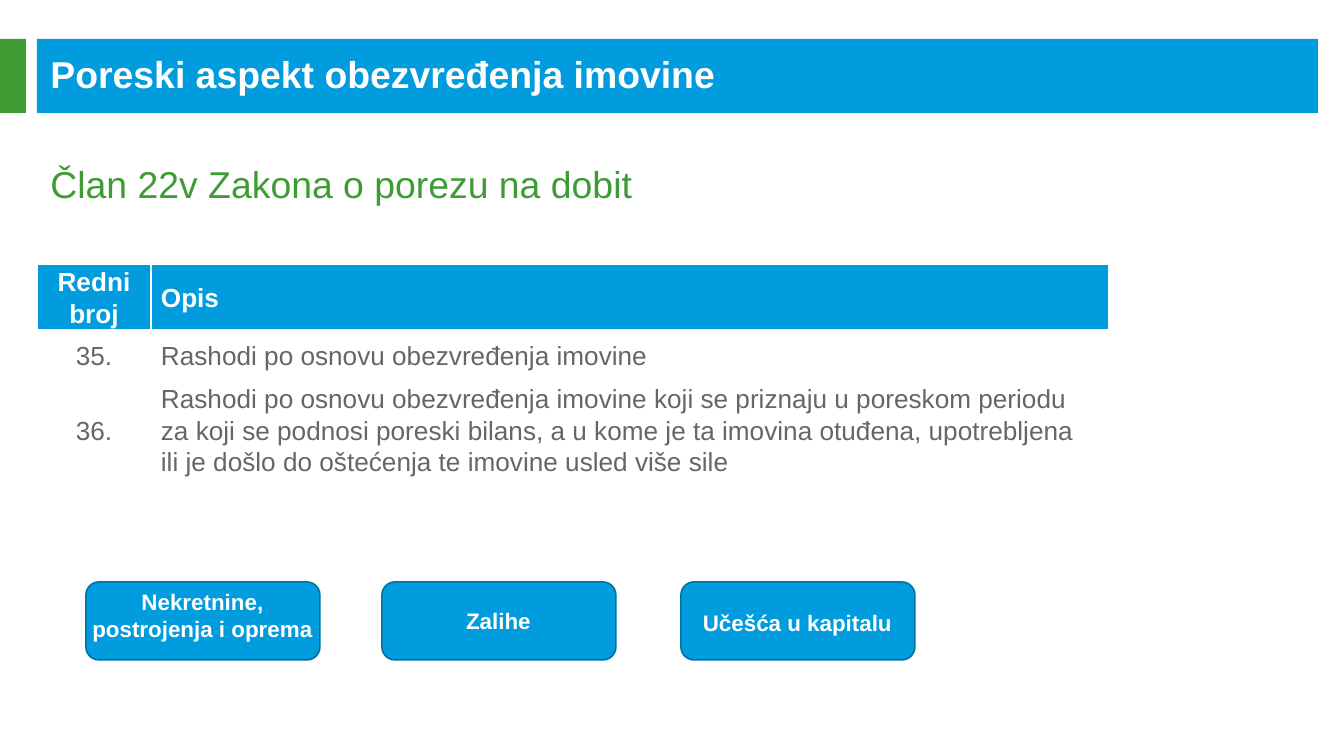
from pptx import Presentation
from pptx.dml.color import RGBColor
from pptx.enum.shapes import MSO_SHAPE as Shape
from pptx.enum.text import MSO_ANCHOR as Anchor, PP_ALIGN as Align
from pptx.oxml.ns import qn
from pptx.util import Pt
from lxml.etree import SubElement

SCALE = 914400 / 134.4
COLORS = {"blue": "009CDE", "green": "3F9C35", "outline": "0073A4",
          "gray": "63666A", "white": "FFFFFF"}
ROWS = [
    ("Redni broj", "Opis"),
    ("35.", "Rashodi po osnovu obezvređenja imovine"),
    ("36.", "Rashodi po osnovu obezvređenja imovine koji se priznaju u poreskom "
            "periodu za koji se podnosi poreski bilans, a u kome je ta imovina "
            "otuđena, upotrebljena ili je došlo do oštećenja te imovine usled "
            "više sile"),
]
COL_WIDTHS = (114, 958)
ROW_HEIGHTS = (66, 48, 102)
# Asset label, box left, label top, label height
ASSETS = [
    ("Nekretnine, postrojenja i oprema", 86, 582, 67),
    ("Zalihe", 382, 601, 40),
    ("Učešća u kapitalu", 681, 603, 40),
]


def px(n):
    return round(n * SCALE)


def box(*lengths):
    return [px(n) for n in lengths]


def color(name):
    return RGBColor.from_string(COLORS[name])


def write(tf, text, size=14, ink="white", bold=False, align=Align.LEFT,
          anchor=Anchor.TOP, spacing=None):
    tf.word_wrap = True
    tf.vertical_anchor = anchor
    p = tf.paragraphs[0]
    p.alignment = align
    p.space_before = Pt(0)
    if spacing:
        p.line_spacing = spacing
    r = p.add_run()
    r.text = text
    r.font.name = "Arial"
    r.font.size = Pt(size)
    r.font.bold = bold
    r.font.color.rgb = color(ink)
    return p


def add_block(slide, kind, area, fill, line=None):
    sp = slide.shapes.add_shape(kind, *box(*area))
    sp.shadow.inherit = False
    sp.fill.solid()
    sp.fill.fore_color.rgb = color(fill)
    if line:
        sp.line.color.rgb = color(line)
        sp.line.width = Pt(0.85)
    else:
        sp.line.fill.background()


def fill_placeholder(slide, ph, area, text, **fmt):
    ph.left, ph.top, ph.width, ph.height = box(*area)
    pPr = write(ph.text_frame, text, size=20, **fmt)._p.get_or_add_pPr()
    pPr.set("marL", "0")
    pPr.set("indent", "0")
    SubElement(pPr, qn("a:buNone"))
    slide.shapes._spTree.append(ph._element)  # bring in front of the bars


def add_borders(cell, bottom):
    tcPr = cell._tc.get_or_add_tcPr()
    for side, width in (("L", 1), ("R", 1), ("T", 1), ("B", bottom)):
        ln = SubElement(tcPr, qn(f"a:ln{side}"), w=str(Pt(width)))
        solid = SubElement(ln, qn("a:solidFill"))
        SubElement(solid, qn("a:srgbClr"), val=COLORS["white"])


def add_rules_table(slide, left, top):
    area = box(left, top, sum(COL_WIDTHS), sum(ROW_HEIGHTS))
    table = slide.shapes.add_table(len(ROWS), len(COL_WIDTHS), *area).table
    table.horz_banding = False
    for col, width in zip(table.columns, COL_WIDTHS):
        col.width = px(width)
    for i, (texts, height) in enumerate(zip(ROWS, ROW_HEIGHTS)):
        table.rows[i].height = px(height)
        header = i == 0
        for j, text in enumerate(texts):
            cell = table.cell(i, j)
            add_borders(cell, bottom=3 if header else 1)
            if header:
                cell.fill.solid()
                cell.fill.fore_color.rgb = color("blue")
            else:
                cell.fill.background()
            cell.margin_left = cell.margin_right = px(10)
            cell.margin_top = cell.margin_bottom = 0
            cell.vertical_anchor = Anchor.MIDDLE
            write(cell.text_frame, text, bold=header, spacing=1.07,
                  anchor=None, ink="white" if header else "gray",
                  align=Align.LEFT if j else Align.CENTER)


def add_asset(slide, text, left, text_top, text_height):
    add_block(slide, Shape.ROUNDED_RECTANGLE, (left, 582, 234, 78),
              "blue", "outline")
    tb = slide.shapes.add_textbox(*box(left - 8, text_top, 249, text_height))
    write(tb.text_frame, text, size=12, bold=True, align=Align.CENTER)


def main():
    prs = Presentation()
    prs.slide_width, prs.slide_height = box(1344, 756)
    slide = prs.slides.add_slide(prs.slide_layouts[1])
    title, body = slide.placeholders

    # Title bar and subtitle
    add_block(slide, Shape.RECTANGLE, (37, 39, 1281, 74), "blue")
    add_block(slide, Shape.RECTANGLE, (0, 39, 26, 74), "green")
    fill_placeholder(slide, title, (37, 54, 1270, 40),
                     "Poreski aspekt obezvređenja imovine",
                     bold=True, anchor=Anchor.MIDDLE)
    fill_placeholder(slide, body, (37, 154, 1281, 54),
                     "Član 22v Zakona o porezu na dobit", ink="green")

    # Asset kinds
    for asset in ASSETS:
        add_asset(slide, *asset)

    # Table of tax return items
    add_rules_table(slide, 37, 264)

    prs.save("out.pptx")


if __name__ == "__main__":
    main()
